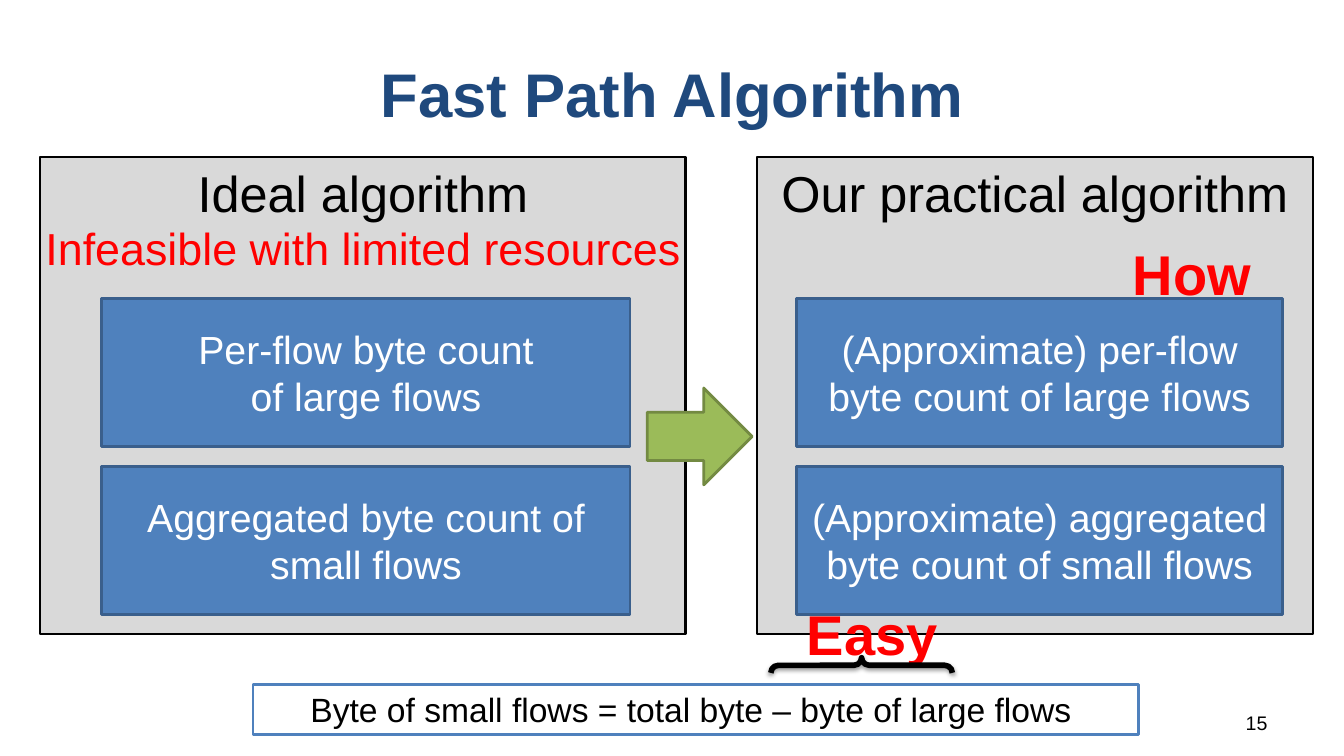
from dataclasses import dataclass

from lxml.etree import fromstring
from pptx import Presentation
from pptx.dml.color import RGBColor
from pptx.enum.shapes import MSO_SHAPE
from pptx.enum.text import MSO_ANCHOR, PP_ALIGN
from pptx.util import Inches, Pt

SHADOW = (
    '<a:effectLst xmlns:a="http://schemas.openxmlformats.org/drawingml/2006/main">'
    '<a:outerShdw blurRad="40000" dist="20000" dir="5400000" rotWithShape="0">'
    '<a:srgbClr val="000000"><a:alpha val="38000"/></a:srgbClr>'
    '</a:outerShdw></a:effectLst>'
)


@dataclass(frozen=True)
class Theme:
    """Colours, font and type sizes of the slide."""
    font: str = "Arial"
    navy: str = "1F497D"
    black: str = "000000"
    white: str = "FFFFFF"
    red: str = "FF0000"
    gray: str = "D9D9D9"
    blue: str = "4F81BD"
    blue_edge: str = "3A5F8C"
    green: str = "9BBB59"
    green_edge: str = "738A42"
    title: int = 44
    callout: int = 40
    heading: int = 36
    remark: int = 32
    body: int = 28
    formula: int = 24
    number: int = 14


def write(tf, text, *, font, size, color, bold=False,
          align=PP_ALIGN.CENTER, anchor=MSO_ANCHOR.TOP):
    """Fill a text frame, one paragraph per line of text."""
    tf.word_wrap = True
    tf.vertical_anchor = anchor
    for i, line in enumerate(text.split("\n")):
        p = tf.add_paragraph() if i else tf.paragraphs[0]
        p.alignment = align
        r = p.add_run()
        r.text = line
        r.font.name = font
        r.font.size = Pt(size)
        r.font.bold = bold
        r.font.color.rgb = RGBColor.from_string(color)


class Deck:
    """Hold the theme and the current slide, and draw its elements."""

    def __init__(self, prs, theme):
        """Add a blank slide to the presentation."""
        self.t = theme
        self.s = prs.slides.add_slide(prs.slide_layouts[6])

    def text(self, text, box, **fmt):
        """Add a text box."""
        sp = self.s.shapes.add_textbox(*map(Inches, box))
        write(sp.text_frame, text, font=self.t.font, **fmt)

    def shape(self, kind, box, line, width, fill=None):
        """Add a preset shape without shadow."""
        sp = self.s.shapes.add_shape(kind, *map(Inches, box))
        sp.shadow.inherit = False
        if fill:
            sp.fill.solid()
            sp.fill.fore_color.rgb = RGBColor.from_string(fill)
        else:
            sp.fill.background()
        sp.line.color.rgb = RGBColor.from_string(line)
        sp.line.width = Pt(width)
        return sp

    def panel(self, heading, left, width):
        """Add a gray panel with its heading at the top."""
        t = self.t
        sp = self.shape(MSO_SHAPE.RECTANGLE, (left, 1.56, width, 4.73), t.black, 1.5, t.gray)
        write(sp.text_frame, heading, font=t.font, size=t.heading, color=t.black)

    def steps(self, texts, left, width):
        """Stack blue boxes inside a panel."""
        t = self.t
        for i, text in enumerate(texts):
            box = (left, 2.96 + i * 1.67, width, 1.47)
            sp = self.shape(MSO_SHAPE.RECTANGLE, box, t.blue_edge, 2, t.blue)
            write(sp.text_frame, text, font=t.font, size=t.body, color=t.white,
                  anchor=MSO_ANCHOR.MIDDLE)

    def callout(self, text, left, top):
        """Add a bold red word."""
        self.text(text, (left, top, 1.6, 0.77), size=self.t.callout,
                  color=self.t.red, bold=True)

    def brace(self, box):
        """Add a brace that points up, with a soft shadow."""
        sp = self.shape(MSO_SHAPE.LEFT_BRACE, box, self.t.black, 4)
        sp.rotation = 90
        sp.adjustments[0] = 0.506
        sp.adjustments[1] = 0.5
        effects = sp.element.spPr.find("{*}effectLst")
        effects.getparent().replace(effects, fromstring(SHADOW))

    def formula(self, text, box):
        """Add the outlined formula box."""
        t = self.t
        sp = self.shape(MSO_SHAPE.RECTANGLE, box, t.blue, 2, t.white)
        write(sp.text_frame, text, font=t.font, size=t.formula, color=t.black)


def main():
    """Build and save the slide."""
    prs = Presentation()
    prs.slide_width, prs.slide_height = Inches(13.33), Inches(7.5)
    t = Theme()
    d = Deck(prs, t)

    d.text("Fast Path Algorithm", (0.67, 0.3, 12, 1.25), size=t.title,
           color=t.navy, bold=True, anchor=MSO_ANCHOR.MIDDLE)
    d.text("15", (9.56, 7, 3.11, 0.35), size=t.number, color=t.black,
           align=PP_ALIGN.RIGHT)

    d.panel("Ideal algorithm", 0.4, 6.4)
    d.steps(["Per-flow byte count\nof large flows",
             "Aggregated byte count of small flows"], 1.01, 5.24)
    d.text("Infeasible with limited resources", (0.27, 2.14, 6.67, 0.64),
           size=t.remark, color=t.red)

    d.shape(MSO_SHAPE.RIGHT_ARROW, (6.42, 3.85, 1.04, 0.96), t.green_edge, 2, t.green)

    d.panel("Our practical algorithm", 7.51, 5.51)
    d.steps(["(Approximate) per-flow byte count of large flows",
             "(Approximate) aggregated byte count of small flows"], 7.9, 4.82)
    d.callout("Easy", 7.85, 5.9)
    d.callout("How", 11.02, 2.33)

    d.brace((8.47, 5.7, 0.15, 1.8))
    d.formula("Byte of small flows = total byte – byte of large flows ",
              (2.51, 6.79, 8.78, 0.5))

    prs.save("out.pptx")


if __name__ == "__main__":
    main()
